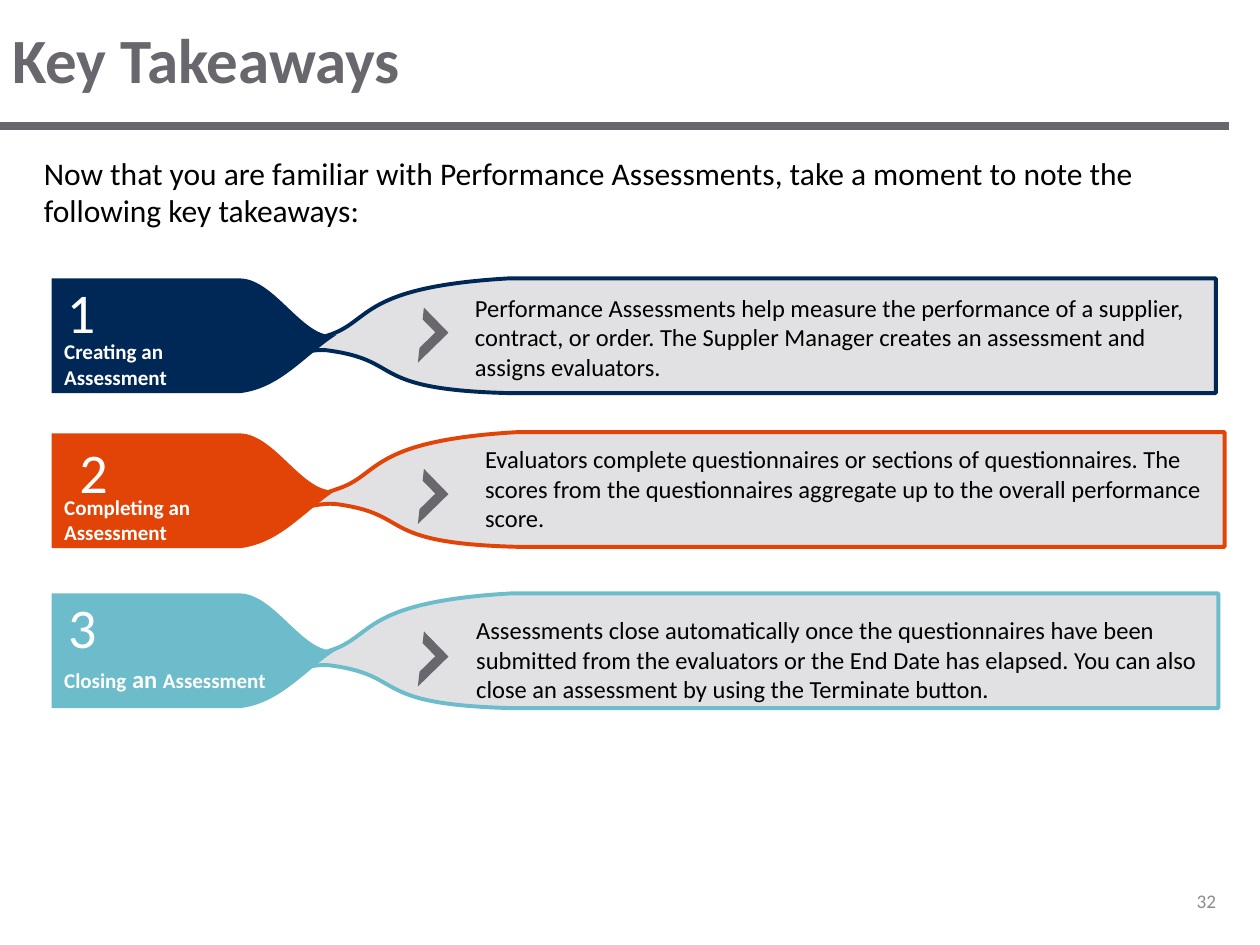
import pptx
import pptx.util
import pptx.dml.color
import pptx.enum.shapes
import pptx.enum.text
import pptx.oxml.ns
from lxml import etree

PX = 9144  # EMU per px, 100 px to the inch
THEME = {
    "font": "Calibri",
    "gray": "69676D", "panel": "E1E0E2", "black": "000000", "white": "FFFFFF",
    "muted": "8C8C8C", "navy": "002857", "orange": "E24307", "teal": "6CBCCB",
    "title": 36, "number": 32, "lead": 18, "body": 14, "label": 12, "page": 11,
}
ALIGN = pptx.enum.text.PP_ALIGN
ANCHOR = pptx.enum.text.MSO_ANCHOR
qn = pptx.oxml.ns.qn


def rgb(name):
    return pptx.dml.color.RGBColor.from_string(THEME[name])


def add_text(shapes, box, runs, color, bold=False, inset=True, anchor=ANCHOR.MIDDLE, align=ALIGN.LEFT):
    """Add a text box of one paragraph; runs are (text, size name) pairs."""
    tf = shapes.add_textbox(*(v * PX for v in box)).text_frame
    tf.word_wrap = True
    tf.vertical_anchor = anchor
    if not inset:
        tf.margin_left = tf.margin_right = tf.margin_top = tf.margin_bottom = 0
    p = tf.paragraphs[0]
    p.alignment = align
    for text, size in runs:
        r = p.add_run()
        r.text = text
        r.font.name = THEME["font"]
        r.font.size = pptx.util.Pt(THEME[size])
        r.font.bold = bold
        r.font.color.rgb = rgb(color)
    return p


prs = pptx.Presentation()
prs.slide_width, prs.slide_height = 1000 * PX, 750 * PX
s = prs.slides.add_slide(prs.slide_layouts[6])

# Header rule and title
rule = s.shapes.add_connector(pptx.enum.shapes.MSO_CONNECTOR.STRAIGHT, 0, 100 * PX, 975 * PX, 100 * PX)
rule.line.color.rgb = rgb("gray")
rule.line.width = pptx.util.Pt(5)
etree.SubElement(rule._element.spPr, qn("a:effectLst"))
add_text(s.shapes, (0, 0, 1000, 92), [("Key Takeaways", "title")], "gray", bold=True)

# Introduction and page number
p = add_text(s.shapes, (25, 117, 950, 553), [(
    "Now that you are familiar with Performance Assessments, take a moment to note the "
    "following key takeaways:", "lead")], "black", anchor=ANCHOR.TOP)
p.space_before = p.space_after = pptx.util.Pt(6)
add_text(s.shapes, (808, 695, 167, 40), [("32", "page")], "muted", align=ALIGN.RIGHT)

# Outlines of the first row: a pair is a corner, six numbers are a Bézier curve
PANEL = [(965, 221), (403, 221), (285, 228, 295, 255, 261, 266), (226, 278, 209, 286, 194, 291),
         (192, 294, 239, 276, 259, 278), (322, 286, 289, 309, 403, 312), (965, 312), (965, 221)]
TAG = [(41, 221), (191, 221), (219, 222, 241, 270, 267, 266), (242, 282, 223, 308, 191, 312),
       (41, 312), (41, 221)]

# Each row: colour, panel shift, tag drop, chevron top, then boxes with their runs
rows = [
    ("navy", (0, 0), 0, 252,
     (53, 216, 91, 62), "1",
     (51, 276, 130, 26), [("Creating an Assessment", "label")],
     (377, 234, 577, 67),
     "Performance Assessments help measure the performance of a supplier, contract, or order. "
     "The Suppler Manager creates an assessment and assigns evaluators."),
    ("teal", (2, 250), 250, 509,
     (54, 466, 91, 62), "3",
     (51, 526, 168, 26), [("Closing", "label"), (" an ", "body"), ("Assessment", "label")],
     (378, 490, 577, 67),
     "Assessments close automatically once the questionnaires have been submitted from the "
     "evaluators or the End Date has elapsed. You can also close an assessment by using the "
     "Terminate button."),
    ("orange", (7, 122), 123, 380,
     (63, 348, 91, 52), "2",
     (51, 400, 130, 22), [("Completing an", "label"), (" ", "body"), ("Assessment", "label")],
     (385, 359, 577, 57),
     "Evaluators complete questionnaires or sections of questionnaires. The scores from the "
     "questionnaires aggregate up to the overall performance score."),
]

for color, (dx, dy), drop, chevron_top, num_box, num, label_box, label, body_box, body in rows:
    row = s.shapes.add_group_shape().shapes

    # Panel, then the coloured tag over its tail
    for outline, right, down, fill in ((PANEL, dx, dy, "panel"), (TAG, 0, drop, color)):
        ends = [((seg[-2] + right) * PX, (seg[-1] + down) * PX) for seg in outline]
        builder = row.build_freeform(*ends[0])
        builder.add_line_segments(ends[1:], close=True)
        sp = builder.convert_to_shape()

        # Turn the straight segments into curves where the outline asks for it
        left, top = min(x for x, y in ends), min(y for x, y in ends)
        for line, seg in zip(list(sp._element.iter(qn("a:lnTo"))), outline[1:]):
            if len(seg) == 6:
                curve = etree.Element(qn("a:cubicBezTo"))
                for x, y in zip(seg[::2], seg[1::2]):
                    etree.SubElement(curve, qn("a:pt"), x=str((x + right) * PX - left),
                                     y=str((y + down) * PX - top))
                line.getparent().replace(line, curve)

        sp.shadow.inherit = False
        sp.fill.solid()
        sp.fill.fore_color.rgb = rgb(fill)
        if outline is PANEL:
            sp.line.color.rgb = rgb(color)
            sp.line.width = pptx.util.Pt(2.25)
        else:
            sp.line.fill.background()

    # Number, label and description
    add_text(row, num_box, [(num, "number")], "white", inset=False)
    add_text(row, label_box, label, "white", bold=True, inset=False)
    add_text(row, body_box, [(body, "body")], "black", inset=False)

    # Chevron
    sp = row.add_shape(pptx.enum.shapes.MSO_SHAPE.HALF_FRAME,
                       317 * PX, chevron_top * PX, 34 * PX, 28 * PX)
    sp.adjustments[0], sp.adjustments[1] = 0.27, 0.26
    sp.rotation = 135.7
    sp.shadow.inherit = False
    sp.fill.solid()
    sp.fill.fore_color.rgb = rgb("gray")
    sp.line.fill.background()

prs.save("out.pptx")
